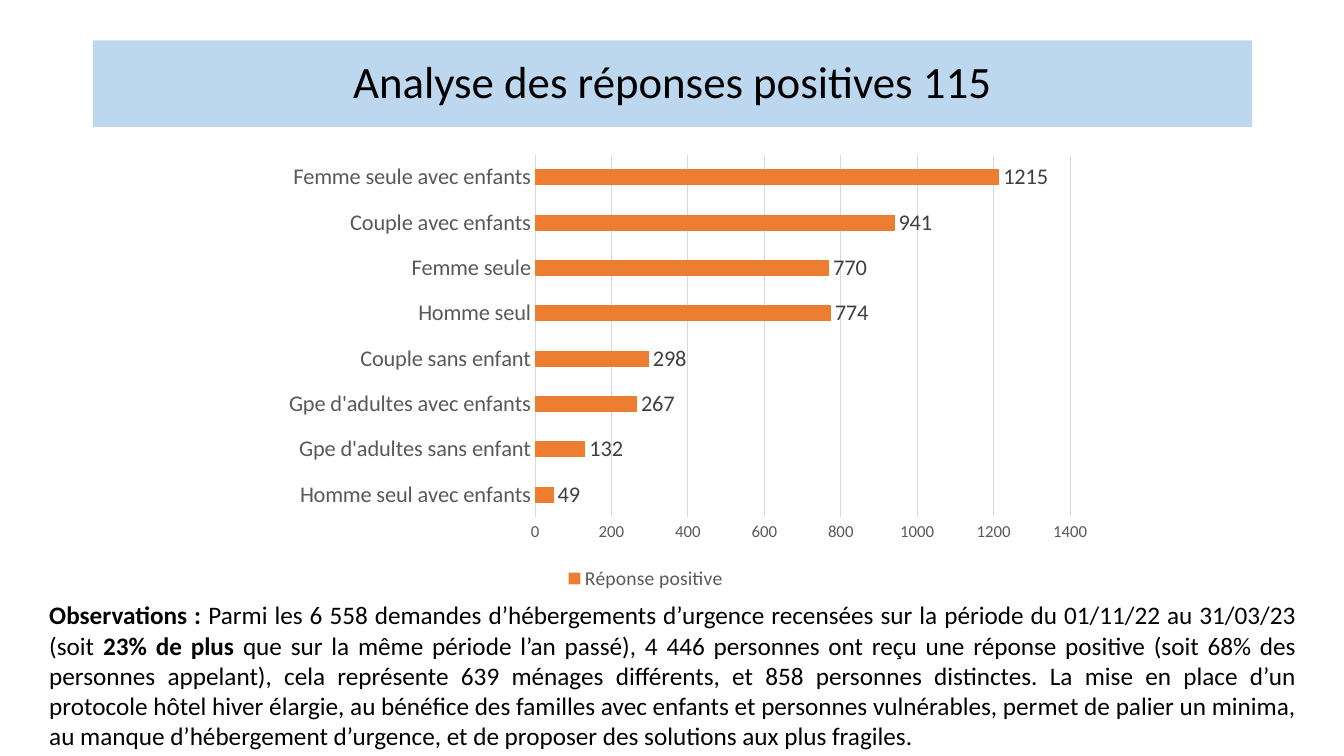
from dataclasses import dataclass

from lxml import etree
from pptx import Presentation
from pptx.chart.axis import CategoryAxis, ValueAxis
from pptx.chart.chart import Chart
from pptx.chart.data import CategoryChartData
from pptx.dml.color import RGBColor
from pptx.enum.chart import XL_CHART_TYPE, XL_LABEL_POSITION, XL_LEGEND_POSITION, XL_TICK_MARK
from pptx.enum.text import MSO_ANCHOR, PP_ALIGN
from pptx.oxml.ns import qn
from pptx.slide import Slide
from pptx.text.text import Font
from pptx.util import Inches, Pt

BAR_CLUSTERED = XL_CHART_TYPE.BAR_CLUSTERED
OUTSIDE_END = XL_LABEL_POSITION.OUTSIDE_END
LEGEND_BOTTOM = XL_LEGEND_POSITION.BOTTOM
NO_TICK = XL_TICK_MARK.NONE
MIDDLE = MSO_ANCHOR.MIDDLE
CENTER = PP_ALIGN.CENTER
JUSTIFY = PP_ALIGN.JUSTIFY
TITLE_ONLY = 5


@dataclass(frozen=True)
class Theme:
    font: str = "Calibri"
    text: str = "000000"
    banner: str = "BDD7EE"
    bar: str = "ED7D31"
    axis_text: str = "595959"
    label_text: str = "404040"
    rule: str = "D9D9D9"
    title_size: float = 32
    body_size: float = 18
    category_size: float = 16
    legend_size: float = 14
    scale_size: float = 12
    rule_width: float = 0.75


@dataclass(frozen=True)
class Area:
    left: float
    top: float
    width: float
    height: float

    def lengths(self) -> tuple[Inches, Inches, Inches, Inches]:
        return Inches(self.left), Inches(self.top), Inches(self.width), Inches(self.height)


@dataclass(frozen=True)
class Span:
    text: str
    bold: bool = False


@dataclass(frozen=True)
class Answer:
    household: str
    count: int


THEME = Theme()
TITLE_AREA = Area(0.92, 0.4, 11.5, 0.86)
CHART_AREA = Area(1.83, 1.4, 9.15, 4.5)
NOTE_AREA = Area(0.39, 5.9, 12.57, 1.62)
PLOT_SHARE = {"x": 0.38, "y": 0.03, "w": 0.58, "h": 0.8}

ANSWERS = [
    Answer("Homme seul avec enfants", 49),
    Answer("Gpe d'adultes sans enfant", 132),
    Answer("Gpe d'adultes avec enfants", 267),
    Answer("Couple sans enfant", 298),
    Answer("Homme seul", 774),
    Answer("Femme seule", 770),
    Answer("Couple avec enfants", 941),
    Answer("Femme seule avec enfants", 1215),
]

OBSERVATIONS = [
    Span("Observations : ", bold=True),
    Span("Parmi les 6 558 demandes d’hébergements d’urgence recensées sur la période "
         "du 01/11/22 au 31/03/23 (soit "),
    Span("23% de plus ", bold=True),
    Span("que sur la même période l’an passé), 4 446 personnes ont reçu une réponse positive "
         "(soit 68% des personnes appelant), cela représente 639 ménages différents, et 858 "
         "personnes distinctes. La mise en place d’un protocole hôtel hiver élargie, au bénéfice "
         "des familles avec enfants et personnes vulnérables, permet de palier un minima, au "
         "manque d’hébergement d’urgence, et de proposer des solutions aux plus fragiles."),
]


def color(code: str) -> RGBColor:
    return RGBColor.from_string(code)


def style_font(font: Font, size: float, code: str, bold: bool = False) -> None:
    font.name = THEME.font
    font.size = Pt(size)
    font.color.rgb = color(code)
    font.bold = bold


def draw_title(page: Slide, text: str) -> None:
    banner = page.shapes.title
    banner.left, banner.top, banner.width, banner.height = TITLE_AREA.lengths()
    banner.fill.solid()
    banner.fill.fore_color.rgb = color(THEME.banner)
    frame = banner.text_frame
    frame.text = text
    frame.vertical_anchor = MIDDLE
    para = frame.paragraphs[0]
    para.alignment = CENTER
    para.line_spacing = 0.9
    style_font(para.runs[0].font, THEME.title_size, THEME.text)


def place_plot(chart: Chart) -> None:
    plot_area = chart.plots[0]._element.getparent()
    for old_layout in plot_area.findall(qn("c:layout")):
        plot_area.remove(old_layout)
    layout = etree.Element(qn("c:layout"))
    manual = etree.SubElement(layout, qn("c:manualLayout"))
    settings = {"layoutTarget": "inner", "xMode": "edge", "yMode": "edge", **PLOT_SHARE}
    for name, value in settings.items():
        etree.SubElement(manual, qn(f"c:{name}"), val=str(value))
    plot_area.insert(0, layout)


def style_axis(axis: CategoryAxis | ValueAxis, size: float) -> None:
    axis.major_tick_mark = NO_TICK
    axis.minor_tick_mark = NO_TICK
    style_font(axis.tick_labels.font, size, THEME.axis_text)


def draw_chart(page: Slide, answers: list[Answer]) -> None:
    data = CategoryChartData()
    data.categories = [answer.household for answer in answers]
    data.add_series("Réponse positive", [answer.count for answer in answers])
    chart = page.shapes.add_chart(BAR_CLUSTERED, *CHART_AREA.lengths(), data).chart
    chart.has_title = False
    style_font(chart.font, THEME.scale_size, THEME.text)
    place_plot(chart)

    plot = chart.plots[0]
    plot.gap_width = 182
    plot.vary_by_categories = False
    bars = plot.series[0]
    bars.format.fill.solid()
    bars.format.fill.fore_color.rgb = color(THEME.bar)
    labels = bars.data_labels
    labels.show_value = True
    labels.position = OUTSIDE_END
    style_font(labels.font, THEME.category_size, THEME.label_text)

    households, scale = chart.category_axis, chart.value_axis
    style_axis(households, THEME.category_size)
    style_axis(scale, THEME.scale_size)
    scale.minimum_scale, scale.maximum_scale, scale.major_unit = 0, 1400, 200
    scale.format.line.fill.background()
    scale.has_major_gridlines = True
    for line in (households.format.line, scale.major_gridlines.format.line):
        line.color.rgb = color(THEME.rule)
        line.width = Pt(THEME.rule_width)

    chart.has_legend = True
    chart.legend.position = LEGEND_BOTTOM
    chart.legend.include_in_layout = False
    style_font(chart.legend.font, THEME.legend_size, THEME.axis_text)


def draw_observations(page: Slide, spans: list[Span]) -> None:
    box = page.shapes.add_textbox(*NOTE_AREA.lengths())
    box.text_frame.word_wrap = True
    para = box.text_frame.paragraphs[0]
    para.alignment = JUSTIFY
    for span in spans:
        run = para.add_run()
        run.text = span.text
        style_font(run.font, THEME.body_size, THEME.text, span.bold)


def main() -> None:
    deck = Presentation()
    deck.slide_width, deck.slide_height = Inches(13.33), Inches(7.5)
    page = deck.slides.add_slide(deck.slide_layouts[TITLE_ONLY])
    draw_title(page, "Analyse des réponses positives 115")
    draw_chart(page, ANSWERS)
    draw_observations(page, OBSERVATIONS)
    deck.save("out.pptx")


if __name__ == "__main__":
    main()
